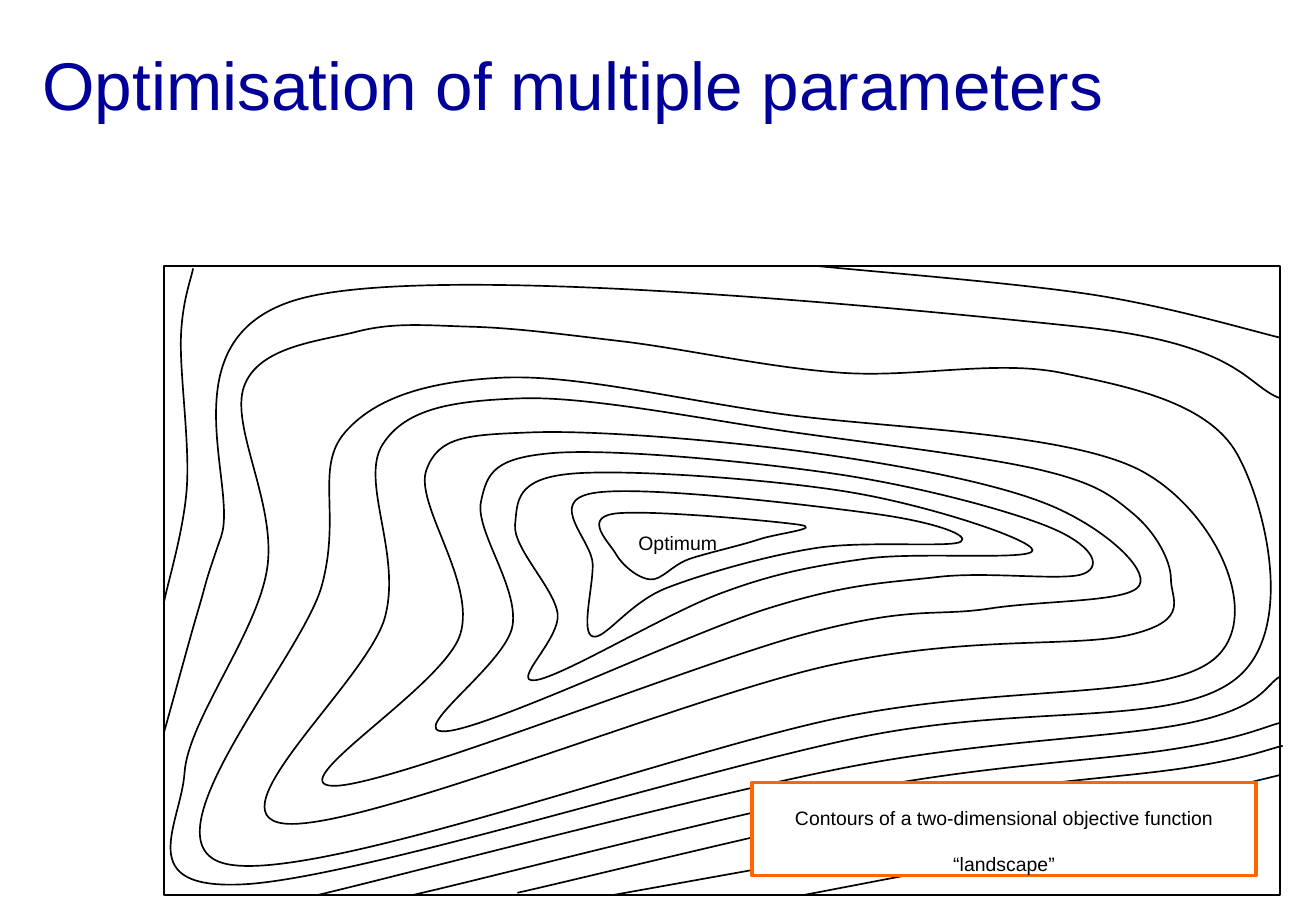
from lxml.etree import SubElement
from pptx import Presentation
from pptx.dml.color import RGBColor
from pptx.enum.shapes import MSO_CONNECTOR as Connector, MSO_SHAPE as Shape
from pptx.enum.text import MSO_ANCHOR as Anchor, MSO_AUTO_SIZE as AutoSize, PP_ALIGN as Align
from pptx.oxml.ns import qn
from pptx.util import Pt

FONT = "Arial"
NAVY = RGBColor(0x00, 0x00, 0x99)
BLACK = RGBColor(0x00, 0x00, 0x00)
WHITE = RGBColor(0xFF, 0xFF, 0xFF)
ORANGE = RGBColor(0xFF, 0x66, 0x00)

# Contour points count grid steps from the slide corner;
# GRID_ORIGIN is the top left corner of the landscape frame.
GRID = Pt(0.72)
GRID_ORIGIN = (135, 219)

# From the outermost ring to the one around the optimum.
CLOSED_CONTOURS = [
    [(220, 468), (201, 318), (294, 273), (388, 269), (512, 281), (694, 307),
     (874, 307), (1018, 373), (1016, 560), (708, 607), (201, 728), (152, 636)],
    [(265, 482), (284, 356), (412, 311), (637, 340), (942, 389), (999, 543),
     (691, 591), (185, 711)],
    [(317, 508), (315, 366), (429, 328), (654, 356), (857, 387), (933, 423),
     (964, 477), (933, 522), (682, 548), (234, 678)],
    [(379, 522), (351, 387), (438, 356), (670, 373), (862, 415), (938, 482),
     (815, 501), (663, 522), (275, 647)],
    [(422, 515), (396, 413), (455, 373), (687, 390), (864, 434), (893, 472),
     (772, 475), (632, 501), (367, 602)],
    [(459, 505), (424, 432), (471, 390), (704, 406), (850, 453), (713, 460),
     (592, 489), (441, 560)],
    [(488, 524), (488, 465), (488, 406), (720, 423), (791, 446), (673, 451), (549, 484)],
    [(535, 477), (507, 456), (505, 423), (658, 432), (625, 444), (568, 460)],
]
OPEN_CONTOURS = [
    [(261, 737), (691, 633), (980, 595), (1054, 557)],
    [(339, 737), (708, 650), (964, 617), (1054, 595)],
    [(426, 735), (752, 661), (977, 632), (1056, 614)],
    [(135, 603), (163, 503), (182, 442), (251, 245), (888, 269), (1054, 328)],
    [(673, 219), (902, 243), (1054, 278)],
    [(159, 221), (149, 278), (154, 399), (135, 496)],
]
STRAIGHT_CONTOURS = [
    [(504, 737), (699, 702)],
    [(661, 737), (760, 718)],
    [(997, 652), (1054, 638)],
]


def style_line(outlined, color=BLACK, width=1):
    outlined.line.color.rgb = color
    outlined.line.width = Pt(width)


def add_text(paragraph, text, size, color):
    run = paragraph.add_run()
    run.text = text
    run.font.name, run.font.size = FONT, Pt(size)
    run.font.color.rgb = color


def fill_label(label, text, wrap):
    frame = label.text_frame
    frame.word_wrap = wrap
    frame.auto_size = AutoSize.NONE
    frame.vertical_anchor = Anchor.MIDDLE
    paragraph = frame.paragraphs[0]
    paragraph.alignment = Align.CENTER
    paragraph.line_spacing = 2.0
    add_text(paragraph, text, 11.5, BLACK)


def to_frame(points):
    return [(x - GRID_ORIGIN[0], y - GRID_ORIGIN[1]) for x, y in points]


def bezier_points(anchors, closed):
    """Return control, control, end for each span of a Catmull-Rom spline."""
    if closed:
        chain = [anchors[-1], *anchors, *anchors[:2]]
    else:
        chain = [anchors[0], *anchors, anchors[-1]]
    points = []
    for before, start, end, after in zip(chain, chain[1:], chain[2:], chain[3:]):
        points.append([s + (e - b) / 6 for b, s, e in zip(before, start, end)])
        points.append([e - (a - s) / 6 for s, e, a in zip(start, end, after)])
        points.append(end)
    return points


def add_curve(shapes, left, top, anchors, closed):
    builder = shapes.build_freeform(*anchors[0], scale=GRID)
    builder.add_line_segments(bezier_points(anchors, closed), close=closed)
    curve = builder.convert_to_shape(left, top)
    segments = list(curve.element.iter(qn("a:lnTo")))
    for span in zip(*[iter(segments)] * 3):
        bezier = SubElement(span[0].getparent(), qn("a:cubicBezTo"))
        span[0].addprevious(bezier)
        for segment in span:
            bezier.append(segment[0])
            segment.getparent().remove(segment)
    curve.shadow.inherit = False
    curve.fill.background()
    style_line(curve)


def add_title(slide, left, top, width, height):
    title = slide.shapes.title
    title.left, title.top, title.width, title.height = left, top, width, height
    frame = title.text_frame
    frame.word_wrap = True
    frame.auto_size = AutoSize.NONE
    frame.vertical_anchor = Anchor.TOP
    frame.margin_top = Pt(7.5)
    paragraph = frame.paragraphs[0]
    paragraph.alignment = Align.LEFT
    add_text(paragraph, "Optimisation of multiple parameters", 40, NAVY)


def add_landscape(slide, left, top, width, height):
    shapes = slide.shapes
    border = shapes.add_shape(Shape.RECTANGLE, left, top, width, height)
    border.shadow.inherit = False
    border.fill.background()
    style_line(border)

    for contours, closed in ((CLOSED_CONTOURS, True), (OPEN_CONTOURS, False)):
        for points in contours:
            add_curve(shapes, left, top, to_frame(points), closed)

    for ends in STRAIGHT_CONTOURS:
        (x1, y1), (x2, y2) = [(left + x * GRID, top + y * GRID) for x, y in to_frame(ends)]
        contour = shapes.add_connector(Connector.STRAIGHT, x1, y1, x2, y2)
        style_line(contour)
        SubElement(contour.element.spPr, qn("a:effectLst"))

    optimum = shapes.add_textbox(left + Pt(255.6), top + Pt(141.84), Pt(97.92), Pt(30.96))
    fill_label(optimum, "Optimum", wrap=False)


def add_caption(slide, left, top, width, height):
    caption = slide.shapes.add_shape(Shape.RECTANGLE, left, top, width, height)
    caption.shadow.inherit = False
    caption.fill.solid()
    caption.fill.fore_color.rgb = WHITE
    style_line(caption, ORANGE, 2)
    fill_label(caption, "Contours of a two-dimensional objective function “landscape”", wrap=True)


def main():
    deck = Presentation()
    deck.slide_width, deck.slide_height = Pt(780), Pt(540)
    slide = deck.slides.add_slide(deck.slide_layouts[5])
    add_title(slide, Pt(18), Pt(18), Pt(744), Pt(90))
    add_landscape(slide, Pt(97.2), Pt(157.68), Pt(661.68), Pt(372.96))
    add_caption(slide, Pt(445.68), Pt(463.68), Pt(298.8), Pt(55.44))
    deck.save("out.pptx")


if __name__ == "__main__":
    main()
